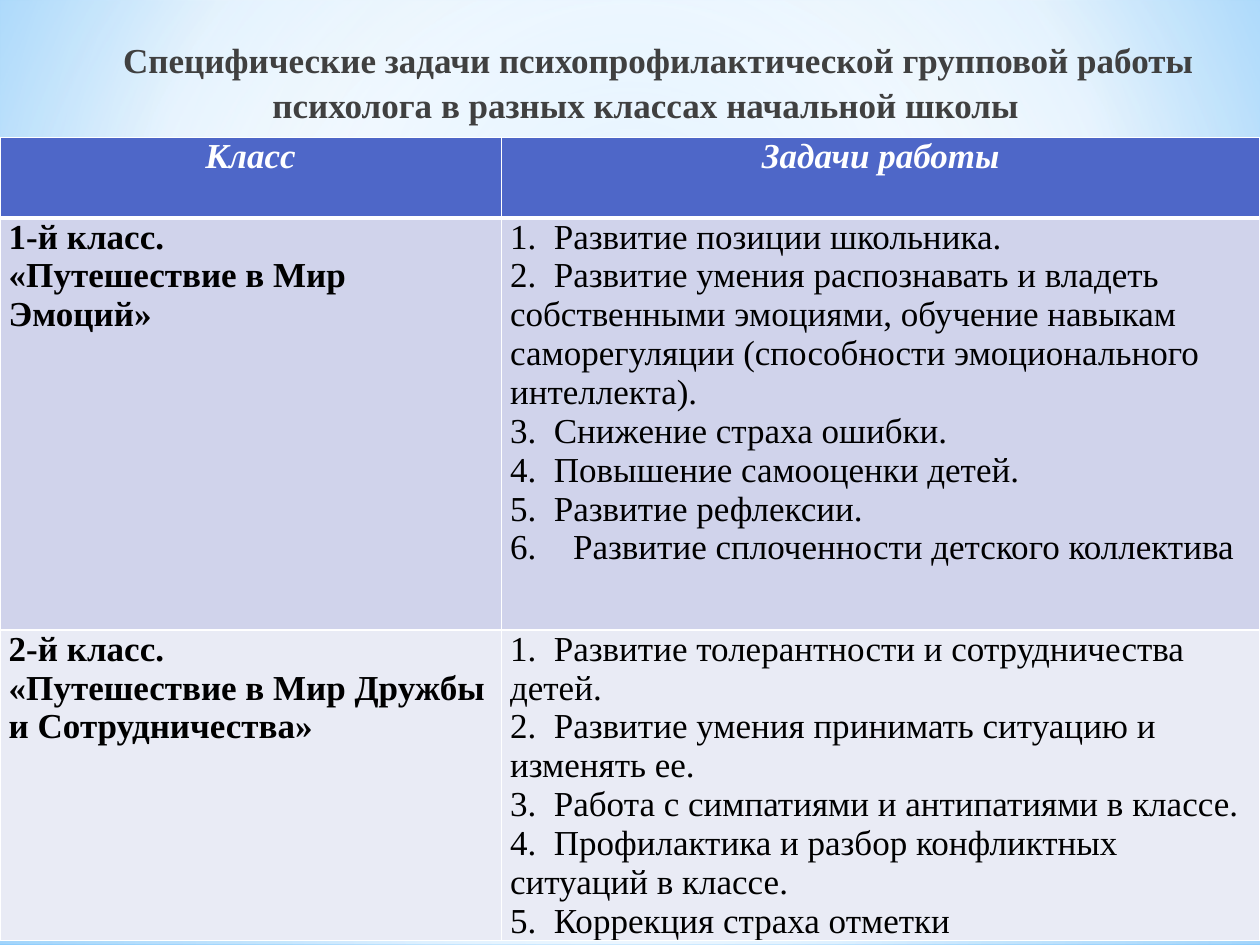
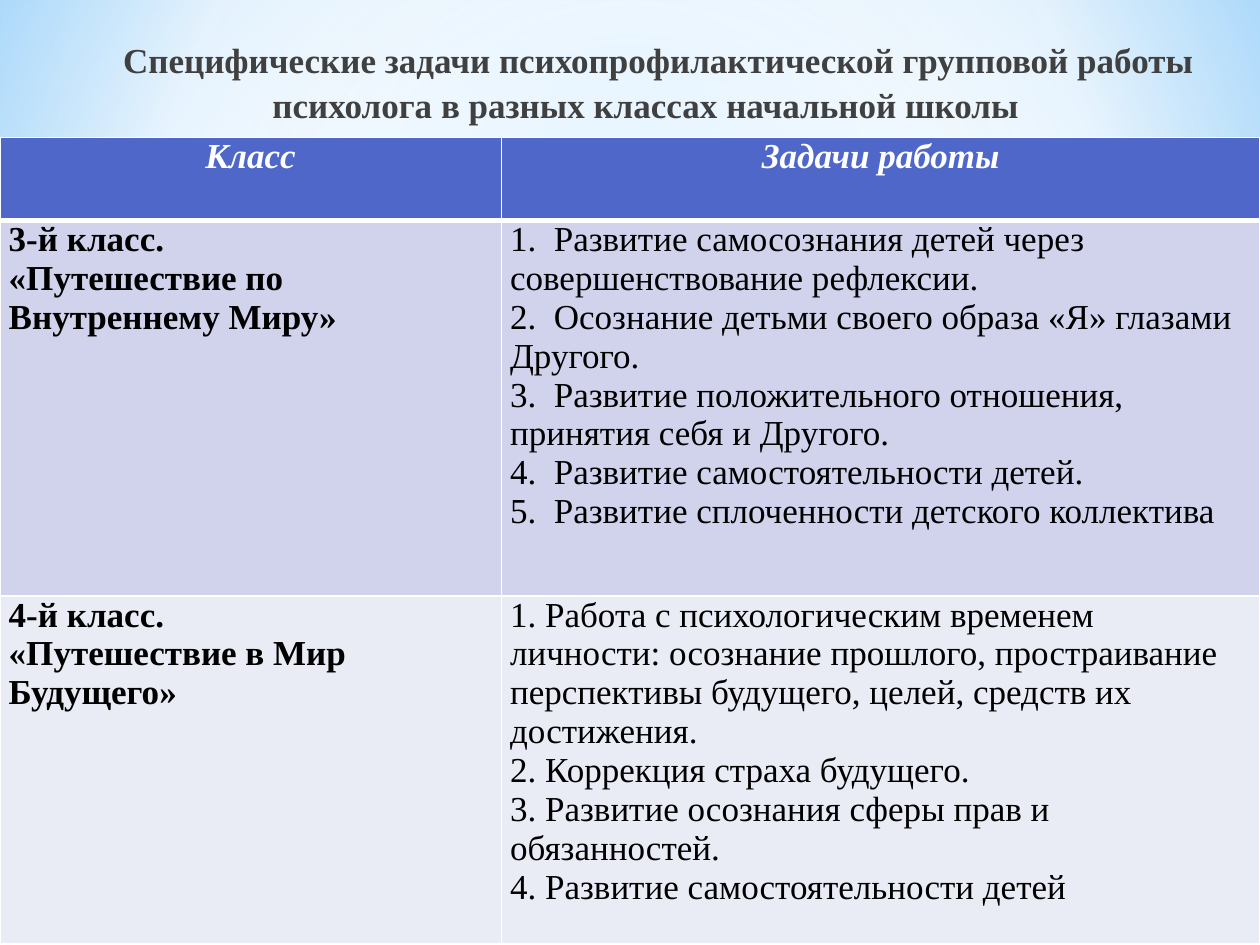
from lxml import etree
from pptx import Presentation
from pptx.dml.color import RGBColor
from pptx.enum.shapes import MSO_SHAPE
from pptx.enum.text import MSO_ANCHOR, MSO_AUTO_SIZE, PP_ALIGN
from pptx.oxml.ns import qn
from pptx.util import Pt

RECT, OVAL = MSO_SHAPE.RECTANGLE, MSO_SHAPE.OVAL
CENTER, LEFT = PP_ALIGN.CENTER, PP_ALIGN.LEFT
TOP, NO_FIT = MSO_ANCHOR.TOP, MSO_AUTO_SIZE.NONE

FONT, SIZE = "Times New Roman", 20
HEX = {"title": "404040", "text": "000000", "white": "FFFFFF",
       "head": "4E67C8", "odd": "D0D3EB", "even": "E9EBF5",
       "sky": "9ED5FF", "blue": "5BB9FF", "pale": "B4DCFA"}

# Content: each class is (name, programme, tasks, gap after number)
TITLE = ("Специфические задачи психопрофилактической групповой работы "
         "психолога в разных классах начальной школы")
HEADS = ["Класс", "Задачи работы"]
PAGES = [
    {"rows": [46, 235.5, 173], "classes": [
        ("1-й класс.", "«Путешествие в Мир Эмоций»", [
            "Развитие позиции школьника.",
            "Развитие умения распознавать и владеть собственными эмоциями, "
            "обучение навыкам саморегуляции (способности эмоционального "
            "интеллекта).",
            "Снижение страха ошибки.",
            "Повышение самооценки детей.",
            "Развитие рефлексии.",
            "Развитие сплоченности детского коллектива"], "\t"),
        ("2-й класс.", "«Путешествие в Мир Дружбы и Сотрудничества»", [
            "Развитие толерантности и сотрудничества детей.",
            "Развитие умения принимать ситуацию и изменять ее.",
            "Работа с симпатиями и антипатиями в классе.",
            "Профилактика и разбор конфликтных ситуаций в классе.",
            "Коррекция страха отметки"], "\t")]},
    {"rows": [47.5, 214.5, 199], "classes": [
        ("3-й класс.", "«Путешествие по Внутреннему Миру»", [
            "Развитие самосознания детей через совершенствование рефлексии.",
            "Осознание детьми своего образа «Я» глазами Другого.",
            "Развитие положительного отношения, принятия себя и Другого.",
            "Развитие самостоятельности детей.",
            "Развитие сплоченности детского коллектива"], "\t"),
        ("4-й класс.", "«Путешествие в Мир Будущего»", [
            "Работа с психологическим временем личности: осознание прошлого, "
            "простраивание перспективы будущего, целей, средств их "
            "достижения.",
            "Коррекция страха будущего.",
            "Развитие осознания сферы прав и обязанностей.",
            "Развитие самостоятельности детей"], " ")]},
]
AUTO = 6  # the sixth task is numbered by the list itself

# Backdrop: stops are (position, colour, opacity) in percent
MID = (50, 50, 50, 50)
SKY = [(0, "sky", 100), (60, "white", 100), (100, "blue", 100)]
GLOWS = [
    (RECT, (0, 402, 720, 138), MID,
     [(0, "white", 91), (37, "white", 76), (100, "pale", 79)]),
    (RECT, (0, 0, 720, 402), MID,
     [(0, "white", 89), (48, "white", 62), (100, "pale", 79)]),
    (RECT, (0, 297, 720, 180), None,
     [(0, "white", 0), (29, "white", 30), (45, "pale", 40),
      (55, "white", 26), (65, "pale", 60), (100, "white", 0)]),
    (OVAL, (0, 126, 720, 402), MID, [(0, "white", 100), (56, "white", 0)]),
]

TITLE_BOX = (20, 16.5, 680, 60)
TABLE_TOP, COLS = 78.5, [286.5, 433.5]


def rgb(name):
    return RGBColor.from_string(HEX[name])


def sub(node, tag, **attrs):
    return etree.SubElement(node, qn(tag), {k: str(v) for k, v in attrs.items()})


def shade(fill, node, stops, focus):
    """Give a fill gradient stops; focus None means top to bottom."""
    fill.solid()
    old = node.find(".//" + qn("a:solidFill"))
    grad = etree.Element(qn("a:gradFill"), {"rotWithShape": "1"})
    marks = sub(grad, "a:gsLst")
    for pos, name, alpha in stops:
        mark = sub(marks, "a:gs", pos=pos * 1000)
        color = sub(mark, "a:srgbClr", val=HEX[name])
        if alpha < 100:
            sub(color, "a:alpha", val=alpha * 1000)
    if focus:
        way = sub(grad, "a:path", path="circle")
        sub(way, "a:fillToRect",
            **{side: 1000 * v for side, v in zip("ltrb", focus)})
    else:
        sub(grad, "a:lin", ang=90 * 60000, scaled=0)
    old.getparent().replace(old, grad)


def backdrop(layout, slide):
    """Build the glows once and hand them to the shared layout."""
    shade(layout.background.fill, layout.element.find(".//" + qn("p:bg")),
          SKY, (20, 10, 20, 60))
    tree = layout.shapes.element
    for n, (kind, box, focus, stops) in enumerate(GLOWS):
        glow = slide.shapes.add_shape(kind, *map(Pt, box))
        glow.shadow.inherit = False
        glow.line.fill.background()
        shade(glow.fill, glow.element.spPr, stops, focus)
        glow.element.nvSpPr.cNvPr.set("id", str(50 + n))
        tree.insert(2 + n, glow.element)


def style(para, color, bold=False, italic=False, align=LEFT):
    para.alignment = align
    for run in para.runs:
        font = run.font
        font.name, font.size = FONT, Pt(SIZE)
        font.bold, font.italic = bold, italic
        font.color.rgb = rgb(color)


def add_title(slide):
    title = slide.shapes.title
    title.left, title.top, title.width, title.height = map(Pt, TITLE_BOX)
    frame = title.text_frame
    frame.text = TITLE
    frame.word_wrap, frame.auto_size = True, NO_FIT
    frame.vertical_anchor = TOP
    para = frame.paragraphs[0]
    style(para, "title", bold=True, align=CENTER)
    para.line_spacing, para.space_before = 1.08, Pt(0)
    props = para._p.get_or_add_pPr()
    props.set("marL", str(Pt(18)))
    props.set("indent", str(Pt(14.5)))


def dress(cell, fill, top=1, bottom=1):
    """Margins, white borders and fill of one cell."""
    cell.margin_left = cell.margin_right = Pt(5)
    cell.margin_top = cell.margin_bottom = 0
    cell.vertical_anchor = TOP
    props = cell._tc.get_or_add_tcPr()
    for side, width in zip("LRTB", (1, 1, top, bottom)):
        line = sub(props, "a:ln" + side, w=Pt(width))
        sub(sub(line, "a:solidFill"), "a:srgbClr", val=HEX["white"])
    cell.fill.solid()
    cell.fill.fore_color.rgb = rgb(fill)


def add_tasks(cell, tasks, gap):
    lines = [task if n == AUTO else f"{n}.{gap}{task}"
             for n, task in enumerate(tasks, 1)]
    cell.text_frame.text = "\n".join(lines)
    for n, para in enumerate(cell.text_frame.paragraphs, 1):
        style(para, "text")
        props = para._p.get_or_add_pPr()
        if n == AUTO:
            props.set("marL", str(Pt(36)))
            props.set("indent", str(-Pt(36)))
            sub(props, "a:buAutoNum", type="arabicPeriod", startAt=n)
        elif gap == "\t":
            sub(sub(props, "a:tabLst"), "a:tab", pos=Pt(25), algn="l")


def add_grid(slide, rows, classes):
    grid = slide.shapes.add_table(len(rows), len(COLS), 0, Pt(TABLE_TOP),
                                  Pt(sum(COLS)), Pt(sum(rows))).table
    for col, width in zip(grid.columns, COLS):
        col.width = Pt(width)
    for row, height in zip(grid.rows, rows):
        row.height = Pt(height)
    for c, head in enumerate(HEADS):
        cell = grid.cell(0, c)
        cell.text_frame.text = head
        style(cell.text_frame.paragraphs[0], "white", True, True, CENTER)
        dress(cell, "head", bottom=3)
    for r, (name, trip, tasks, gap) in enumerate(classes, 1):
        left, right = grid.cell(r, 0), grid.cell(r, 1)
        left.text_frame.text = f"{name}\n{trip}"
        for para in left.text_frame.paragraphs:
            style(para, "text", bold=True)
        add_tasks(right, tasks, gap)
        for cell in (left, right):
            dress(cell, "odd" if r % 2 else "even", top=3 if r == 1 else 1)


def main():
    prs = Presentation()
    prs.slide_width, prs.slide_height = Pt(720), Pt(540)
    layout = prs.slide_layouts[5]
    for n, page in enumerate(PAGES):
        slide = prs.slides.add_slide(layout)
        if n == 0:
            backdrop(layout, slide)
        add_title(slide)
        add_grid(slide, page["rows"], page["classes"])
    prs.save("out.pptx")


if __name__ == "__main__":
    main()
